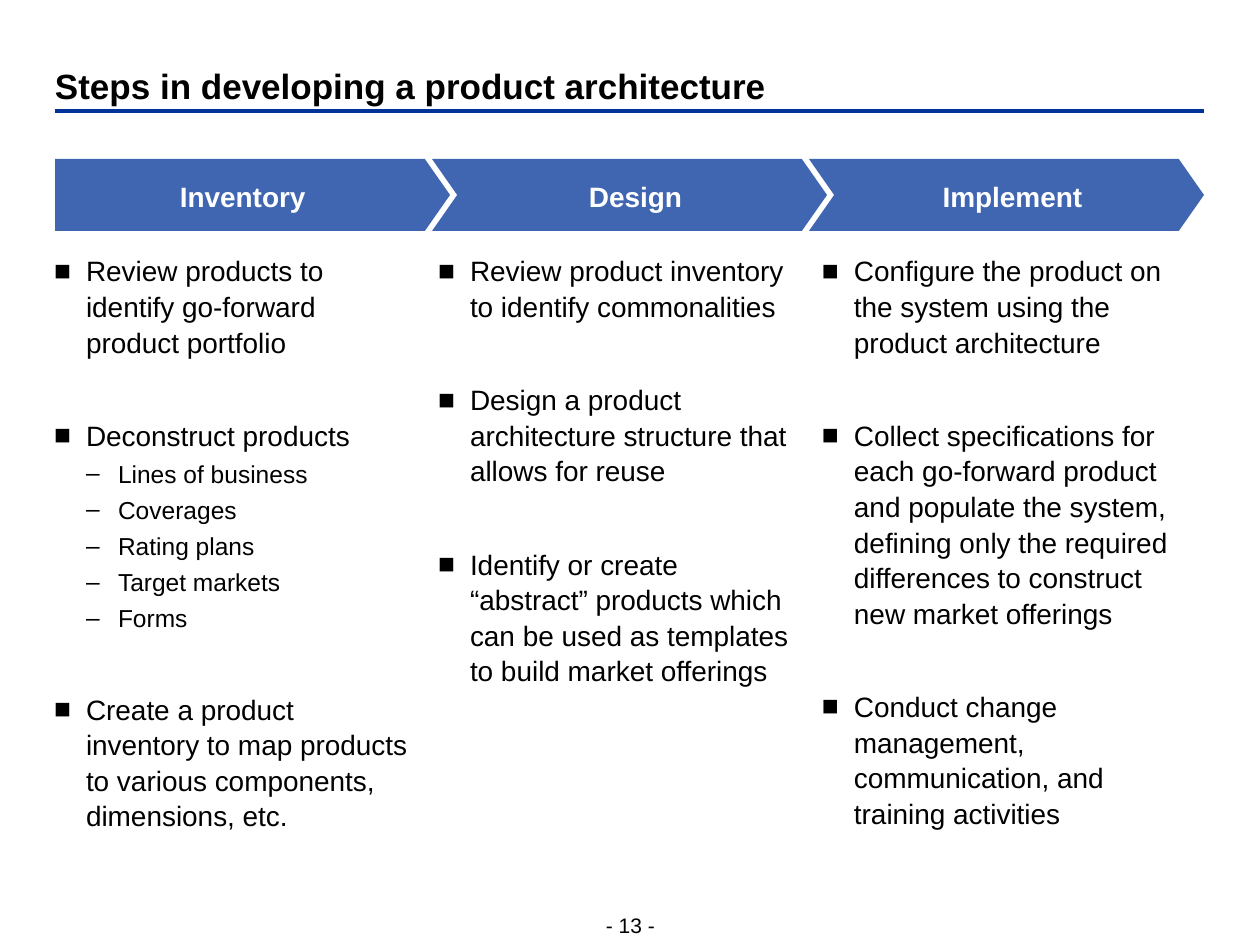
from dataclasses import dataclass

from lxml import etree
from pptx import Presentation
from pptx.dml.color import RGBColor
from pptx.enum.shapes import MSO_CONNECTOR, MSO_SHAPE
from pptx.enum.text import MSO_ANCHOR, PP_ALIGN
from pptx.oxml.ns import qn
from pptx.util import Pt

EMU_PER_PX = 914400 / 126
LEFT, CENTER = PP_ALIGN.LEFT, PP_ALIGN.CENTER
TOP, MIDDLE, BOTTOM = MSO_ANCHOR.TOP, MSO_ANCHOR.MIDDLE, MSO_ANCHOR.BOTTOM
PENTAGON, CHEVRON = MSO_SHAPE.PENTAGON, MSO_SHAPE.CHEVRON
STRAIGHT = MSO_CONNECTOR.STRAIGHT


@dataclass(frozen=True)
class Theme:
    font: str = "Arial"
    ink: str = "000000"
    rule: str = "003399"
    step: str = "4066B2"
    step_text: str = "FFFFFF"
    title_size: int = 20
    body_size: int = 16
    detail_size: int = 14
    footer_size: int = 12
    line_spacing: float = 1.06
    point_gap: float = 33
    detail_gap: float = 2.8


THEME = Theme()

MARGIN, CONTENT_WIDTH = 55, 1149
STEP_TOP, STEP_WIDTH, STEP_HEIGHT, STEP_PITCH = 159, 395, 72, 377
COLUMN_LEFT, COLUMN_TOP, COLUMN_PITCH = 54, 252, 384
COLUMN_WIDTH, COLUMN_HEIGHT = 383, 261
INDENT = 32

# Each step: its name, then its points as (text, details).
STEPS = [
    ("Inventory", [
        ("Review products to identify go-forward product portfolio", []),
        ("Deconstruct products",
         ["Lines of business", "Coverages", "Rating plans", "Target markets", "Forms"]),
        ("Create a product inventory to map products to various components, "
         "dimensions, etc.", []),
    ]),
    ("Design", [
        ("Review product inventory to identify commonalities", []),
        ("Design a product architecture structure that allows for reuse", []),
        ("Identify or create “abstract” products which can be used as templates "
         "to build market offerings", []),
    ]),
    ("Implement", [
        ("Configure the product on the system using the product architecture", []),
        ("Collect specifications for each go-forward product and populate the system, "
         "defining only the required differences to construct new market offerings", []),
        ("Conduct change management, communication, and training activities", []),
    ]),
]


def px(length):
    return round(length * EMU_PER_PX)


def color(code):
    return RGBColor.from_string(code)


def set_frame(shape, anchor, insets=(0, 0, 0, 0), wrap=True):
    """Set up the text frame; insets run left, top, right, bottom."""
    frame = shape.text_frame
    frame.word_wrap = wrap
    frame.vertical_anchor = anchor
    frame.margin_left, frame.margin_top, frame.margin_right, frame.margin_bottom = map(px, insets)
    return frame


def write(para, text, size, ink=THEME.ink, bold=False, align=LEFT, spacing=THEME.line_spacing):
    para.alignment = align
    para.line_spacing = spacing
    span = para.add_run()
    span.text = text
    span.font.name = THEME.font
    span.font.size = Pt(size)
    span.font.bold = bold
    span.font.color.rgb = color(ink)


def add_label(page, box, text, size, anchor=BOTTOM, wrap=True, **style):
    label = page.shapes.add_textbox(*map(px, box))
    frame = set_frame(label, anchor, wrap=wrap)
    write(frame.paragraphs[0], text, size, **style)


def add_rule(page, left, right, y):
    rule = page.shapes.add_connector(STRAIGHT, px(left), px(y), px(right), px(y))
    rule.line.color.rgb = color(THEME.rule)
    rule.line.width = Pt(2.25)
    etree.SubElement(rule._element.spPr, qn("a:effectLst"))


def add_step(page, index, name):
    kind, inset_left = (CHEVRON, 25) if index else (PENTAGON, 6)
    left = MARGIN + index * STEP_PITCH
    step = page.shapes.add_shape(
        kind, px(left), px(STEP_TOP), px(STEP_WIDTH), px(STEP_HEIGHT))
    step.adjustments[0] = 0.35
    step.shadow.inherit = False
    step.fill.solid()
    step.fill.fore_color.rgb = color(THEME.step)
    step.line.fill.background()
    frame = set_frame(step, MIDDLE, (inset_left, 6, 13, 6))
    write(frame.paragraphs[0], name, THEME.body_size, THEME.step_text, bold=True, align=CENTER)


def set_bullet(para, mark, level):
    props = para._p.get_or_add_pPr()
    props.set("marL", str(px(INDENT * level)))
    props.set("indent", str(-px(INDENT)))
    tint = etree.SubElement(props, qn("a:buClr"))
    etree.SubElement(tint, qn("a:srgbClr"), val=THEME.ink)
    etree.SubElement(props, qn("a:buFont"), typeface=THEME.font)
    etree.SubElement(props, qn("a:buChar"), char=mark)


def add_column(page, index, points):
    left = COLUMN_LEFT + index * COLUMN_PITCH
    column = page.shapes.add_textbox(
        px(left), px(COLUMN_TOP), px(COLUMN_WIDTH), px(COLUMN_HEIGHT))
    frame = set_frame(column, TOP, (0, 0, 25, 0))
    for number, (point, details) in enumerate(points):
        para = frame.add_paragraph() if number else frame.paragraphs[0]
        set_bullet(para, "■", 1)
        para.space_before = Pt(THEME.point_gap if number else 0)
        write(para, point, THEME.body_size)
        for detail in details:
            para = frame.add_paragraph()
            set_bullet(para, "–", 2)
            para.space_before = Pt(THEME.detail_gap)
            write(para, detail, THEME.detail_size)


def main():
    deck = Presentation()
    deck.slide_width, deck.slide_height = px(1260), px(945)
    page = deck.slides.add_slide(deck.slide_layouts[6])

    add_label(page, (MARGIN, 57, CONTENT_WIDTH, 50),
              "Steps in developing a product architecture",
              THEME.title_size, bold=True, spacing=1.0)
    add_rule(page, MARGIN, MARGIN + CONTENT_WIDTH, 111)
    # Later steps lie behind earlier ones.
    for index, (name, points) in reversed(list(enumerate(STEPS))):
        add_step(page, index, name)
        add_column(page, index, points)
    add_label(page, (605, 912, 51, 26), "- 13 -", THEME.footer_size, wrap=False, align=CENTER)
    deck.save("out.pptx")


if __name__ == "__main__":
    main()
